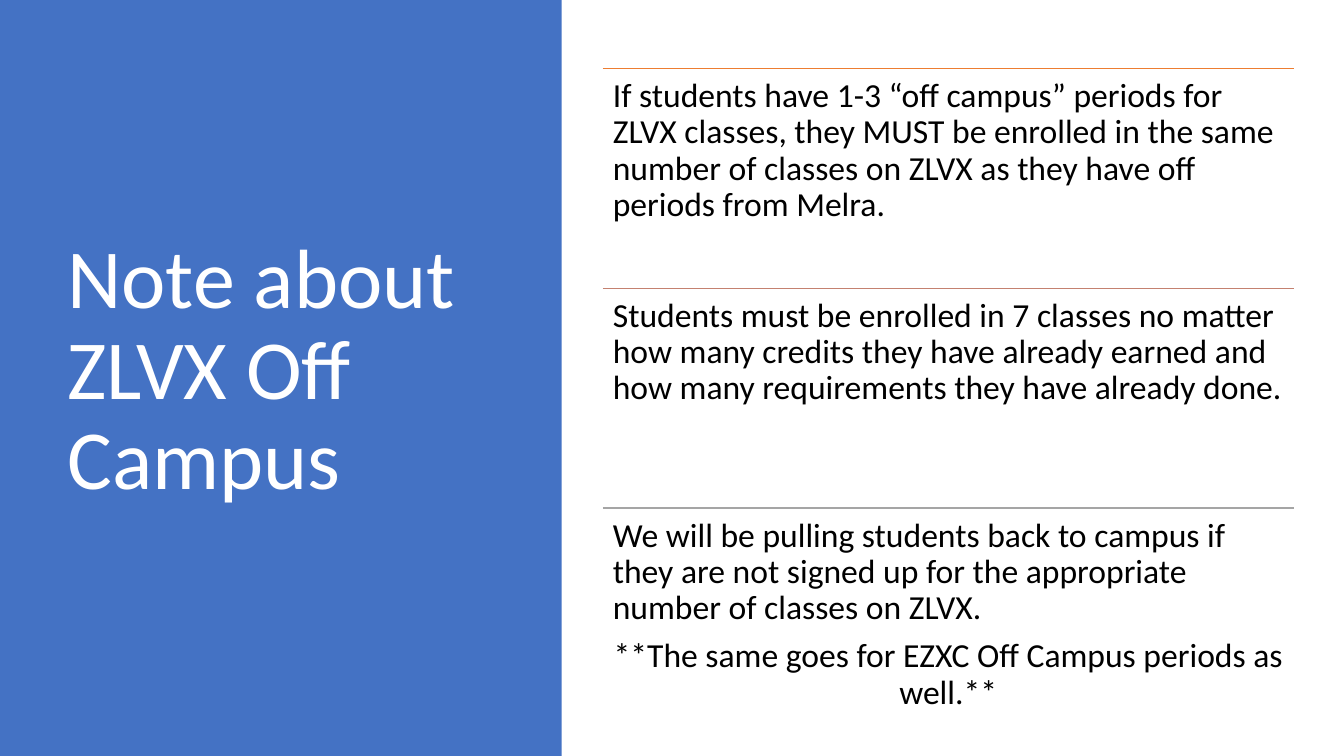
from dataclasses import dataclass

from lxml import etree
from pptx import Presentation
from pptx.dml.color import RGBColor
from pptx.enum.shapes import MSO_CONNECTOR, MSO_SHAPE
from pptx.enum.text import MSO_ANCHOR, PP_ALIGN
from pptx.oxml.ns import qn
from pptx.util import Inches, Pt

RECT = MSO_SHAPE.RECTANGLE
LINE = MSO_CONNECTOR.STRAIGHT
TOP, MIDDLE = MSO_ANCHOR.TOP, MSO_ANCHOR.MIDDLE
LEFT, CENTER = PP_ALIGN.LEFT, PP_ALIGN.CENTER


@dataclass(frozen=True)
class Theme:
    """Colours, font and type sizes of the slide."""
    font: str = "Calibri"
    panel: str = "4472C4"
    light: str = "FFFFFF"
    dark: str = "000000"
    rules: tuple = ("ED7D31", "C48170", "A5A5A5")
    title: int = 60
    body: int = 24
    after: float = 8.4


class Page:
    """Draws styled elements on one slide."""

    def __init__(self, slide, theme):
        """Keep the slide and its theme."""
        self.slide = slide
        self.theme = theme

    def panel(self, left, top, width, height, color):
        """Add a plain filled rectangle."""
        shape = self.slide.shapes.add_shape(
            RECT, Inches(left), Inches(top), Inches(width), Inches(height))
        shape.shadow.inherit = False
        shape.fill.solid()
        shape.fill.fore_color.rgb = RGBColor.from_string(color)
        shape.line.fill.background()

    def rule(self, left, top, width, color):
        """Add a thin horizontal line."""
        line = self.slide.shapes.add_connector(
            LINE, Inches(left), Inches(top), Inches(left + width), Inches(top))
        line.line.color.rgb = RGBColor.from_string(color)
        line.line.width = Pt(1)
        etree.SubElement(line._element.spPr, qn("a:effectLst"))

    def text(self, left, top, width, height, lines, size, color,
             anchor=TOP, inset=0.1, after=0):
        """Add a text box of (text, alignment) paragraphs."""
        box = self.slide.shapes.add_textbox(
            Inches(left), Inches(top), Inches(width), Inches(height))
        frame = box.text_frame
        frame.word_wrap = True
        frame.vertical_anchor = anchor
        frame.margin_left = frame.margin_right = Inches(0.1)
        frame.margin_top = frame.margin_bottom = Inches(inset)
        for index, (words, align) in enumerate(lines):
            para = frame.add_paragraph() if index else frame.paragraphs[0]
            para.text = words
            para.alignment = align
            para.line_spacing = 0.9
            para.space_after = Pt(after)
            para.font.name = self.theme.font
            para.font.size = Pt(size)
            para.font.color.rgb = RGBColor.from_string(color)


NOTES = (
    [("If students have 1-3 “off campus” periods for ZLVX classes, they MUST "
      "be enrolled in the same number of classes on ZLVX as they have off "
      "periods from Melra.", LEFT)],
    [("Students must be enrolled in 7 classes no matter how many credits they "
      "have already earned and how many requirements they have already done.",
      LEFT)],
    [("We will be pulling students back to campus if they are not signed up "
      "for the appropriate number of classes on ZLVX.", LEFT),
     ("**The same goes for EZXC Off Campus periods as well.**", CENTER)],
)


def main():
    """Build and save the slide."""
    deck = Presentation()
    deck.slide_width, deck.slide_height = Inches(13.33), Inches(7.5)
    theme = Theme()
    page = Page(deck.slides.add_slide(deck.slide_layouts[6]), theme)

    page.panel(0, 0, 5.57, 7.5, theme.panel)
    page.text(0.57, 0.68, 4.16, 6.02, [("Note about ZLVX Off Campus", LEFT)],
              theme.title, theme.light, anchor=MIDDLE, inset=0.05)

    left, first, width, step = 5.98, 0.68, 6.85, 2.18
    for row, (lines, color) in enumerate(zip(NOTES, theme.rules)):
        top = first + row * step
        page.rule(left, top, width, color)
        page.text(left, top, width, step, lines, theme.body, theme.dark,
                  after=theme.after)

    deck.save("out.pptx")


if __name__ == "__main__":
    main()
